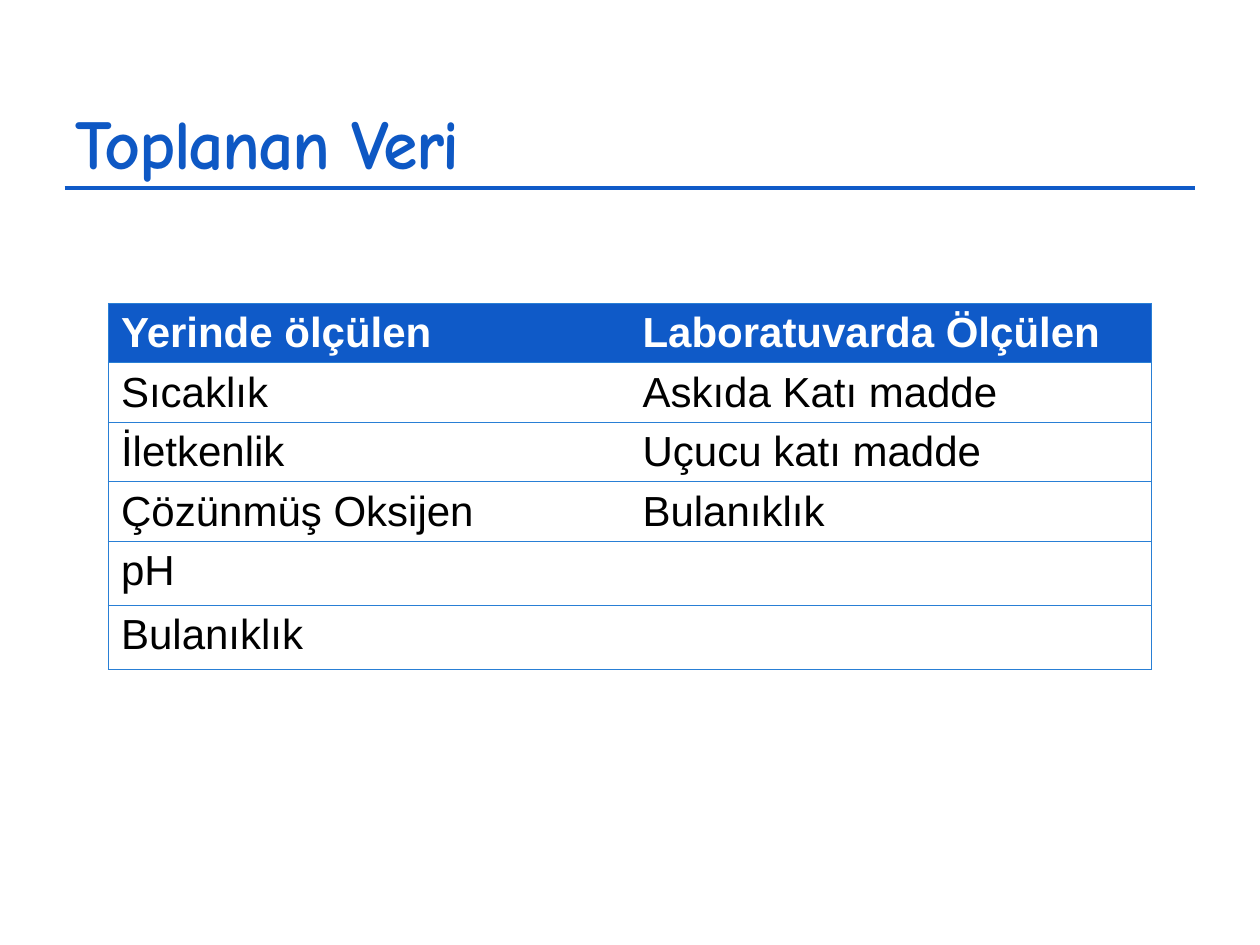
from lxml import etree
from pptx import Presentation
from pptx.dml.color import RGBColor
from pptx.enum import shapes, text
from pptx.oxml.ns import qn
from pptx.util import Pt

TITLE = "Toplanan Veri"
ROWS = [
    ("Yerinde ölçülen", "Laboratuvarda Ölçülen"),
    ("Sıcaklık", "Askıda Katı madde"),
    ("İletkenlik", "Uçucu katı madde"),
    ("Çözünmüş Oksijen", "Bulanıklık"),
    ("pH", ""),
    ("Bulanıklık", ""),
]
COLORS = {"title": "0E58C4", "accent": "0F5AC8", "border": "297FD5",
          "white": "FFFFFF", "black": "000000"}
NO_STYLE = "{2D5ABB26-0587-4C30-8999-92F81FD0307C}"
TABLE_LEFT, TABLE_TOP, COL_W, ROW_H = 62, 173.4, 298, 34


def rgb(name):
    return RGBColor.from_string(COLORS[name])


def write(tf, words, *, font="Arial", size=24, color="black", bold=False, spacing=None):
    p = tf.paragraphs[0]
    p.alignment = text.PP_ALIGN.LEFT
    p.font.size = Pt(size)
    if not words:
        return
    r = p.add_run()
    r.text = words
    r.font.name, r.font.size, r.font.bold = font, Pt(size), bold
    r.font.color.rgb = rgb(color)
    if spacing is not None:
        r.font._element.set("spc", str(round(spacing * 100)))


def set_borders(cell, sides):
    """Draw the named sides (L, R, T, B) and clear the others."""
    tc_pr = cell._tc.get_or_add_tcPr()
    for side in "LRTB":
        ln = etree.SubElement(tc_pr, qn(f"a:ln{side}"), w=str(Pt(0.75)))
        if side in sides:
            fill = etree.SubElement(ln, qn("a:solidFill"))
            etree.SubElement(fill, qn("a:srgbClr"), val=COLORS["border"])
        else:
            etree.SubElement(ln, qn("a:noFill"))


def add_title(s):
    line = s.shapes.add_connector(shapes.MSO_CONNECTOR.STRAIGHT,
                                  Pt(37), Pt(107.3), Pt(683), Pt(107.3))
    line.line.color.rgb = rgb("accent")
    line.line.width = Pt(2.25)
    etree.SubElement(line._element.spPr, qn("a:effectLst"))

    sp = s.shapes.title
    sp.left, sp.top, sp.width, sp.height = Pt(36), Pt(42), Pt(648), Pt(78)
    tf = sp.text_frame
    tf.word_wrap = True
    tf.auto_size = text.MSO_AUTO_SIZE.NONE
    tf.vertical_anchor = text.MSO_ANCHOR.MIDDLE
    write(tf, TITLE, font="Comic Neue", size=40, color="title", bold=True, spacing=-1)


def add_measurements(s):
    n_cols = len(ROWS[0])
    frame = s.shapes.add_table(len(ROWS), n_cols, Pt(TABLE_LEFT), Pt(TABLE_TOP),
                               Pt(COL_W * n_cols), Pt(ROW_H * len(ROWS)))
    table = frame.table
    table.horz_banding = False
    table._tbl.tblPr.find(qn("a:tableStyleId")).text = NO_STYLE
    for col in table.columns:
        col.width = Pt(COL_W)
    for i, row in enumerate(ROWS):
        table.rows[i].height = Pt(ROW_H)
        header = i == 0
        for j, words in enumerate(row):
            cell = table.cell(i, j)
            set_borders(cell, "TB" + ("L" if j == 0 else "") + ("R" if j == n_cols - 1 else ""))
            if header:
                cell.fill.solid()
                cell.fill.fore_color.rgb = rgb("accent")
            else:
                cell.fill.background()
            write(cell.text_frame, words, color="white" if header else "black", bold=header)


def main():
    prs = Presentation()
    prs.slide_width, prs.slide_height = Pt(720), Pt(540)
    s = prs.slides.add_slide(prs.slide_layouts[5])
    s.background.fill.solid()
    s.background.fill.fore_color.rgb = rgb("white")
    add_title(s)
    add_measurements(s)
    prs.save("out.pptx")


if __name__ == "__main__":
    main()
